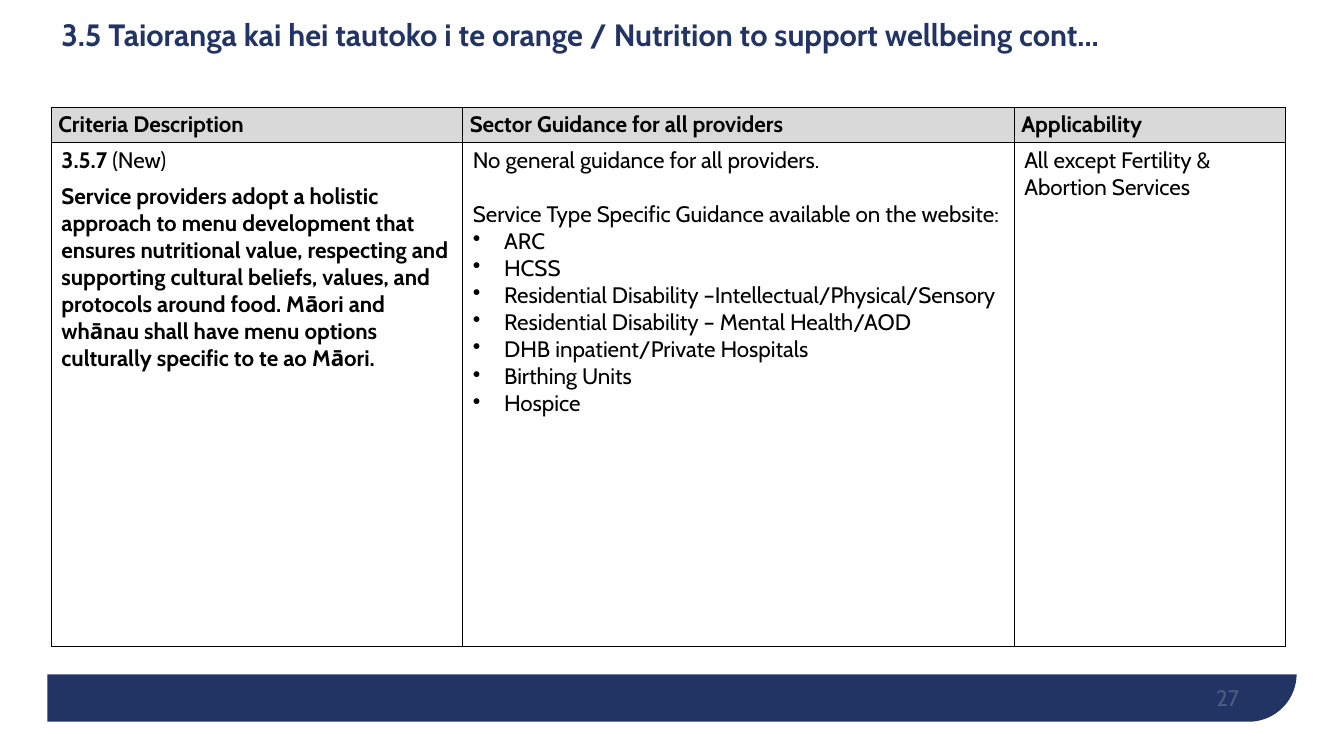
"""Build the slide on nutrition criteria 3.5.7."""
from dataclasses import dataclass

import pptx
import pptx.dml.color
import pptx.enum.shapes
import pptx.enum.text
import pptx.oxml
import pptx.oxml.ns
import pptx.util

PX = 9144
ALIGN = pptx.enum.text.PP_ALIGN
ANCHOR = pptx.enum.text.MSO_ANCHOR
SHAPE = pptx.enum.shapes.MSO_SHAPE


@dataclass(frozen=True)
class Theme:
    font: str = "Cabin"
    navy: str = "213463"
    white: str = "FFFFFF"
    black: str = "000000"
    grey: str = "D9D9D9"
    title: int = 22
    body: int = 16


@dataclass(frozen=True)
class Box:
    left: int
    top: int
    width: int
    height: int

    def emu(self) -> list[int]:
        return [n * PX for n in (self.left, self.top, self.width, self.height)]


@dataclass(frozen=True)
class Para:
    text: str
    bold: bool = False
    tail: str = ""
    before: int = 0
    bullet: bool = False


THEME = Theme()
HEADS = ("Criteria Description", "Sector Guidance for all providers", "Applicability")
TYPES = (
    "ARC",
    "HCSS",
    "Residential Disability –Intellectual/Physical/Sensory",
    "Residential Disability – Mental Health/AOD",
    "DHB inpatient/Private Hospitals",
    "Birthing Units",
    "Hospice",
)
CRITERIA = [
    Para("3.5.7 ", True, tail="(New)"),
    Para("Service providers adopt a holistic approach to menu development that "
         "ensures nutritional value, respecting and supporting cultural beliefs, "
         "values, and protocols around food. Māori and whānau shall have menu "
         "options culturally specific to te ao Māori.", True, before=6),
]
GUIDANCE = [
    Para("No general guidance for all providers."),
    Para("Service Type Specific Guidance available on the website:", before=19),
    *(Para(name, bullet=True) for name in TYPES),
]
SCOPE = [Para("All except Fertility & Abortion Services")]
ROWS = ([[Para(head, True)] for head in HEADS], [CRITERIA, GUIDANCE, SCOPE])
COLS = (408, 547, 269)
HEIGHTS = (34, 500)


def rgb(code: str) -> pptx.dml.color.RGBColor:
    return pptx.dml.color.RGBColor.from_string(code)


def style(font, size: int, color: str, bold: bool | None) -> None:
    font.name = THEME.font
    font.size = pptx.util.Pt(size)
    font.color.rgb = rgb(color)
    font.bold = bold


def block(slide, kind: SHAPE, box: Box, color: str):
    shape = slide.shapes.add_shape(kind, *box.emu())
    shape.shadow.inherit = False
    shape.fill.solid()
    shape.fill.fore_color.rgb = rgb(color)
    shape.line.fill.background()
    return shape


def label(slide, box: Box, text: str, size: int, color: str, bold: bool, anchor: ANCHOR):
    frame = slide.shapes.add_textbox(*box.emu()).text_frame
    frame.word_wrap = True
    frame.vertical_anchor = anchor
    para = frame.paragraphs[0]
    para.text = text
    style(para.font, size, color, bold)
    return frame


def write(frame, paras: list[Para]) -> None:
    for i, item in enumerate(paras):
        para = frame.add_paragraph() if i else frame.paragraphs[0]
        para.add_run().text = item.text
        if item.bullet:
            props = para._p.get_or_add_pPr()
            props.set("marL", str(31 * PX))
            props.set("indent", str(-31 * PX))
            mark = pptx.oxml.ns.qn("a:buChar")
            props.makeelement(mark, {})
            props.append(props.makeelement(mark, {"char": "•"}))
        if item.before:
            para.space_before = pptx.util.Pt(item.before)
        style(para.font, THEME.body, THEME.black, None if item.tail else item.bold)
        if item.tail:
            para.runs[0].font.bold = item.bold
            rest = para.add_run()
            rest.text = item.tail
            rest.font.bold = not item.bold


def border(cell) -> None:
    props = cell._tc.get_or_add_tcPr()
    for i, side in enumerate("LRTB"):
        props.insert(i, pptx.oxml.parse_xml(
            f'<a:ln{side} {pptx.oxml.ns.nsdecls("a")} w="12700"><a:solidFill>'
            f'<a:srgbClr val="{THEME.black}"/></a:solidFill></a:ln{side}>'))


def grid(slide, box: Box) -> None:
    table = slide.shapes.add_table(len(HEIGHTS), len(COLS), *box.emu()).table
    table.first_row = table.horz_banding = False
    for col, width in zip(table.columns, COLS):
        col.width = width * PX
    for r, (row, height) in enumerate(zip(table.rows, HEIGHTS)):
        row.height = height * PX
        for cell, paras in zip(row.cells, ROWS[r]):
            cell.fill.solid()
            cell.fill.fore_color.rgb = rgb(THEME.white if r else THEME.grey)
            if r == 0:
                cell.vertical_anchor = ANCHOR.MIDDLE
                cell.margin_left = cell.margin_right = 7 * PX
                cell.margin_top = cell.margin_bottom = 0
            border(cell)
            write(cell.text_frame, paras)


def main() -> None:
    deck = pptx.Presentation()
    deck.slide_width, deck.slide_height = 1333 * PX, 750 * PX
    slide = deck.slides.add_slide(deck.slide_layouts[6])

    band = block(slide, SHAPE.ROUND_1_RECTANGLE, Box(47, 37, 1239, 679), THEME.navy)
    band.adjustments[0] = 0.07
    band.rotation = 180
    band._element.spPr.xfrm.set("flipH", "1")
    block(slide, SHAPE.RECTANGLE, Box(0, 0, 1333, 669), THEME.white)

    page = label(slide, Box(929, 665, 300, 40), "27", THEME.body, THEME.white,
                 False, ANCHOR.BOTTOM)
    page.margin_left = page.margin_right = page.margin_top = page.margin_bottom = 0
    page.paragraphs[0].alignment = ALIGN.RIGHT
    for tint in page._txBody.iter(pptx.oxml.ns.qn("a:srgbClr")):
        tint.append(tint.makeelement(pptx.oxml.ns.qn("a:alpha"), {"val": "20000"}))

    title = label(slide, Box(51, 13, 1200, 47),
                  "3.5 Taioranga kai hei tautoko i te orange / Nutrition to support "
                  "wellbeing cont...", THEME.title, THEME.navy, True, ANCHOR.MIDDLE)
    title.paragraphs[0].line_spacing = 0.9
    grid(slide, Box(51, 107, sum(COLS), sum(HEIGHTS)))
    deck.save("out.pptx")


if __name__ == "__main__":
    main()
